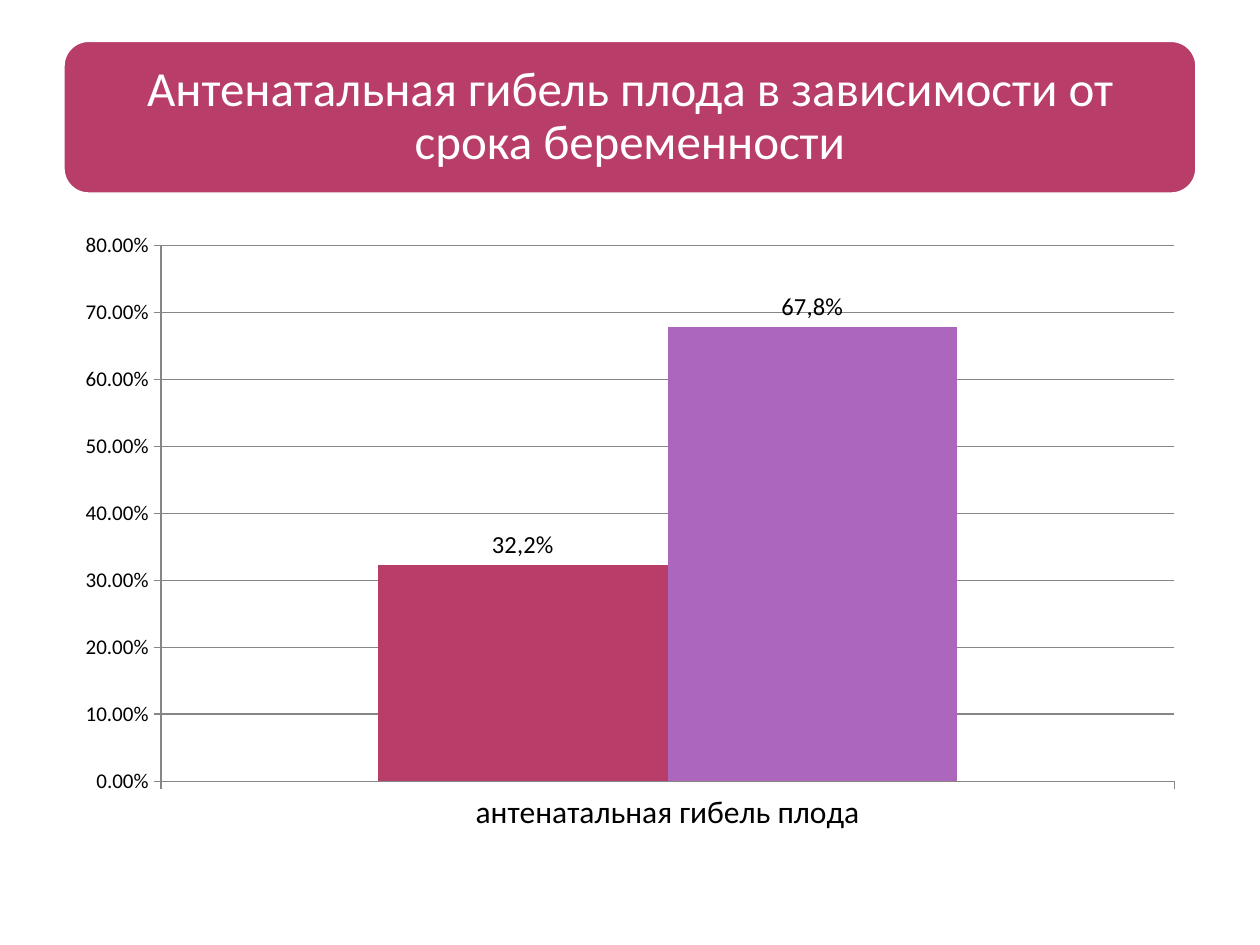
from pptx import Presentation
from pptx.chart.data import CategoryChartData
from pptx.dml.color import RGBColor
from pptx.enum.chart import XL_CHART_TYPE, XL_LABEL_POSITION, XL_TICK_MARK
from pptx.enum.shapes import MSO_SHAPE
from pptx.enum.text import MSO_ANCHOR, MSO_AUTO_SIZE, PP_ALIGN
from pptx.util import Emu, Pt

COLUMNS = XL_CHART_TYPE.COLUMN_CLUSTERED
OUTSIDE_END = XL_LABEL_POSITION.OUTSIDE_END
TICK_OUT = XL_TICK_MARK.OUTSIDE
ROUNDED = MSO_SHAPE.ROUNDED_RECTANGLE
MIDDLE = MSO_ANCHOR.MIDDLE
CENTER = PP_ALIGN.CENTER
NO_FIT = MSO_AUTO_SIZE.NONE

PX = 9144  # EMU per px, 100 px to the inch
TITLE_ONLY = 5

TITLE = "Антенатальная гибель плода в зависимости от срока беременности"
CATEGORY = "антенатальная гибель плода"
SERIES = [
    ("Series 1", 0.322, "32,2%", "B83D68"),
    ("Series 2", 0.678, "67,8%", "AC66BB"),
]


def px(*lengths):
    return [Emu(n * PX) for n in lengths]


def rgb(value):
    return RGBColor.from_string(value)


class Deck:
    font = "Calibri"
    white, black, accent, grey = "FFFFFF", "000000", "B83D68", "868686"

    def __init__(self, width, height):
        self.prs = Presentation()
        self.prs.slide_width, self.prs.slide_height = px(width, height)
        self.s = None

    def add_slide(self):
        self.s = self.prs.slides.add_slide(self.prs.slide_layouts[TITLE_ONLY])

    def style(self, font, size, color):
        for name, value in {"name": self.font, "size": Pt(size), "bold": False}.items():
            setattr(font, name, value)
        font.color.rgb = rgb(color)

    def rule(self, line, color, width):
        line.color.rgb = rgb(color)
        line.width = Pt(width)

    def banner(self, *box):
        sp = self.s.shapes.add_shape(ROUNDED, *px(*box))
        sp.shadow.inherit = False
        sp.fill.solid()
        sp.fill.fore_color.rgb = rgb(self.accent)
        self.rule(sp.line, self.white, 2)
        # Behind the title placeholder
        self.s.shapes._spTree.insert(2, sp._element)

    def title(self, text, *box):
        sp = self.s.shapes.title
        sp.left, sp.top, sp.width, sp.height = px(*box)
        tf = sp.text_frame
        inset = px(12)[0]
        frame = {"word_wrap": True, "auto_size": NO_FIT, "vertical_anchor": MIDDLE,
                 "margin_left": inset, "margin_right": inset,
                 "margin_top": inset, "margin_bottom": inset}
        for name, value in frame.items():
            setattr(tf, name, value)
        p = tf.paragraphs[0]
        p.alignment = CENTER
        p.line_spacing = 0.9
        r = p.add_run()
        r.text = text
        self.style(r.font, 28, self.white)

    def column_chart(self, category, series, *box):
        data = CategoryChartData(number_format="0.00%")
        data.categories = [category]
        for name, value, _, _ in series:
            data.add_series(name, [value])
        chart = self.s.shapes.add_chart(COLUMNS, *px(*box), data).chart
        chart.has_legend = chart.has_title = False
        self.style(chart.font, 18, self.black)
        self.axes(chart)

        # Columns and their labels
        plot = chart.plots[0]
        plot.gap_width = 150
        plot.overlap = 0
        plot.vary_by_categories = False
        for column, (_, _, label, color) in zip(plot.series, series):
            column.format.fill.solid()
            column.format.fill.fore_color.rgb = rgb(color)
            labels = column.data_labels
            labels.show_value = True
            labels.number_format = "0.00%"
            labels.number_format_is_linked = False
            labels.position = OUTSIDE_END
            self.style(labels.font, 14, self.black)
            point_label = column.points[0].data_label
            r = point_label.text_frame.paragraphs[0].add_run()
            r.text = label
            self.style(r.font, 14, self.black)
            point_label.position = OUTSIDE_END

    def axes(self, chart):
        val = chart.value_axis
        scale = {"minimum_scale": 0, "maximum_scale": 0.8, "major_unit": 0.1,
                 "has_major_gridlines": True}
        for name, value in scale.items():
            setattr(val, name, value)
        val.tick_labels.number_format = "0.00%"
        val.tick_labels.number_format_is_linked = False
        self.rule(val.major_gridlines.format.line, self.grey, 0.75)
        for axis, size in ((chart.category_axis, 18), (val, 12)):
            axis.major_tick_mark = TICK_OUT
            self.rule(axis.format.line, self.grey, 0.75)
            self.style(axis.tick_labels.font, size, self.black)


def main():
    deck = Deck(1000, 750)
    deck.add_slide()
    # Heading
    deck.banner(50, 32, 900, 122)
    deck.title(TITLE, 56, 38, 888, 110)
    # Share of cases by term
    deck.column_chart(CATEGORY, SERIES, 50, 175, 900, 495)
    deck.prs.save("out.pptx")


if __name__ == "__main__":
    main()
